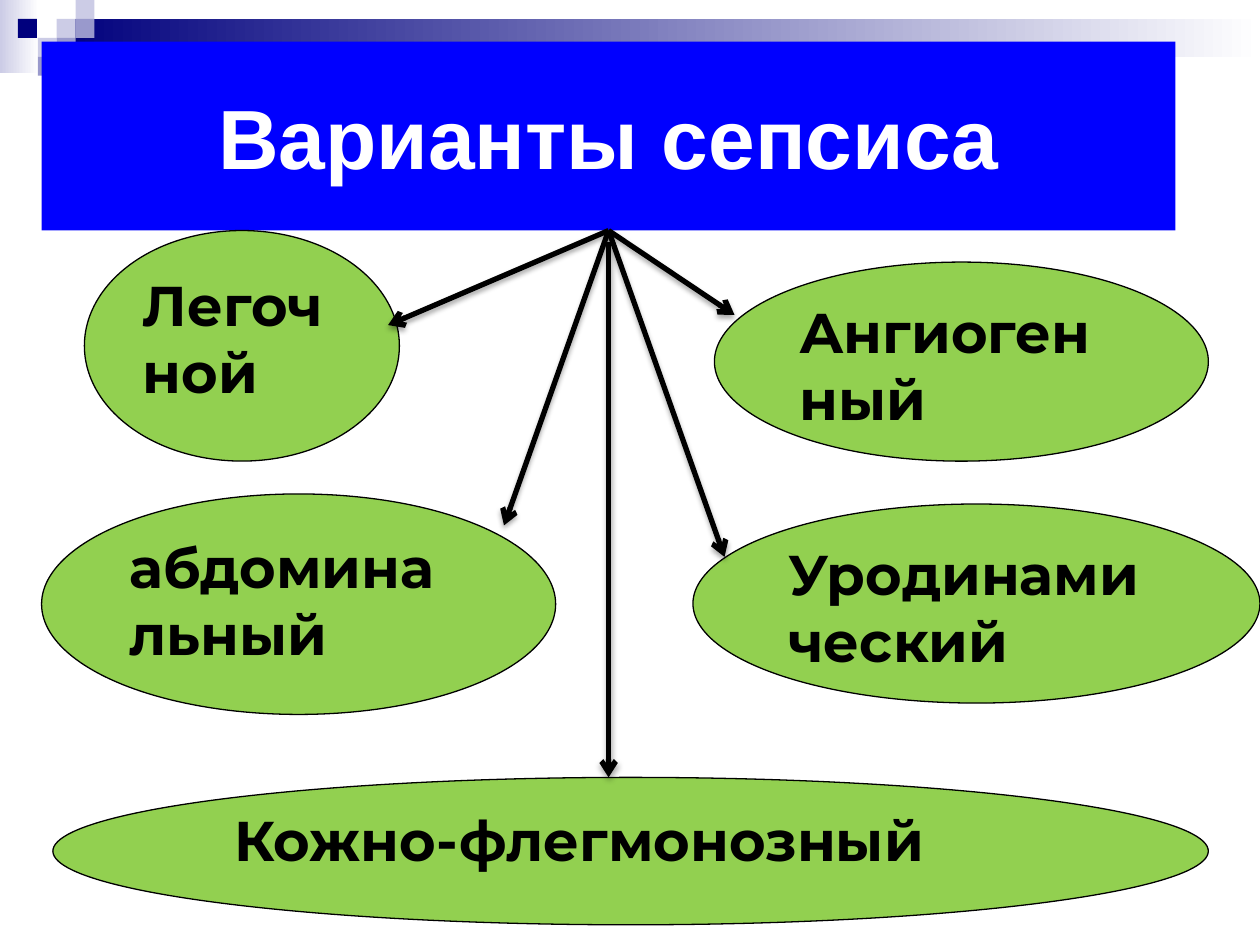
from lxml import etree
from pptx import Presentation
from pptx.dml.color import RGBColor
from pptx.enum.shapes import MSO_CONNECTOR as CONN, MSO_SHAPE as SHAPE
from pptx.enum.text import MSO_ANCHOR as ANCHOR, PP_ALIGN as ALIGN
from pptx.oxml import parse_xml
from pptx.oxml.ns import nsdecls, qn
from pptx.util import Inches, Pt

COLORS = {
    "navy": "00007D", "mid": "9999CC", "pale": "CCCCE6", "white": "FFFFFF",
    "blue": "0000FF", "green": "92D050", "black": "000000",
}
TITLE = "Варианты сепсиса"
TITLE_BOX = (0.33, 0.33, 9, 1.5)
VARIANTS = [
    ("Легочной", (0.67, 1.83, 2.5, 1.83)),
    ("Уродинамический", (5.5, 4, 4.5, 1.58)),
    ("Ангиогенный", (5.67, 2.08, 3.92, 1.58)),
    ("абдоминальный", (0.33, 3.92, 4.08, 1.75)),
    ("Кожно-флегмонозный", (0.42, 6.17, 9.17, 1.17)),
]
HUB = (4.83, 1.83)
ARROWS = [
    (HUB, (3.08, 2.58)),
    (HUB, (4, 4.17)),
    ((4.83, 1.92), (4.83, 6.17)),
    (HUB, (5.75, 4.42)),
    (HUB, (5.83, 2.5)),
]
BANDS = [
    ((0, 0, 0.31, 0.58), "pale"),
    ((0.45, 0.15, 9.55, 0.3), "navy"),
]
TILE = 0.15
TILES = [
    (3, 1, "pale"), (4, 0, "pale"), (4, 1, "mid"), (2, 2, "pale"),
    (0.95, 1, "navy"), (3, 2, "mid"), (2, 3, "mid"),
]


def rgb(name):
    return RGBColor.from_string(COLORS[name])


def add_shape(kind, box, color):
    sp = s.shapes.add_shape(kind, *map(Inches, box))
    sp.shadow.inherit = False
    sp.fill.solid()
    sp.fill.fore_color.rgb = rgb(color)
    sp.line.fill.background()
    return sp


def add_text(sp, text, font, size, color, align, anchor):
    tf = sp.text_frame
    tf.word_wrap = True
    tf.vertical_anchor = anchor
    tf.text = text
    p = tf.paragraphs[0]
    p.alignment = align
    f = p.runs[0].font
    f.name, f.size, f.bold = font, Pt(size), True
    f.color.rgb = rgb(color)


def add_arrow(start, end):
    c = s.shapes.add_connector(CONN.STRAIGHT, *map(Inches, start + end))
    if start == HUB:
        c.begin_connect(title, 2)
    c.line.width = Pt(3)
    c.line.color.rgb = rgb("black")
    etree.SubElement(c.line._get_or_add_ln(), qn("a:tailEnd"), type="arrow")
    c._element.spPr.append(parse_xml(
        f'<a:effectLst {nsdecls("a")}>'
        f'<a:outerShdw blurRad="{Pt(3.1)}" dist="{Pt(1.8)}" dir="5400000" rotWithShape="0">'
        f'<a:srgbClr val="{COLORS["black"]}"><a:alpha val="35000"/></a:srgbClr>'
        '</a:outerShdw></a:effectLst>'))


prs = Presentation()
prs.slide_width, prs.slide_height = Inches(10), Inches(7.5)
s = prs.slides.add_slide(prs.slide_layouts[6])

for box, color in BANDS:
    fill = add_shape(SHAPE.RECTANGLE, box, color).fill
    fill.gradient()
    fill.gradient_angle = 0
    for stop, name, pos in zip(fill.gradient_stops, (color, "white"), (0, 1)):
        stop.color.rgb = rgb(name)
        stop.position = pos

for col, row, color in TILES:
    add_shape(SHAPE.RECTANGLE, (col * TILE, row * TILE, TILE, TILE), color)

title = add_shape(SHAPE.RECTANGLE, TITLE_BOX, "blue")
add_text(title, TITLE, "Arial", 48, "white", ALIGN.CENTER, ANCHOR.MIDDLE)

for text, box in VARIANTS:
    sp = add_shape(SHAPE.OVAL, box, "green")
    sp.line.color.rgb = rgb("black")
    sp.line.width = Pt(0.75)
    add_text(sp, text, "Montserrat", 32, "black", ALIGN.LEFT, ANCHOR.TOP)

for start, end in ARROWS:
    add_arrow(start, end)

prs.save("out.pptx")
